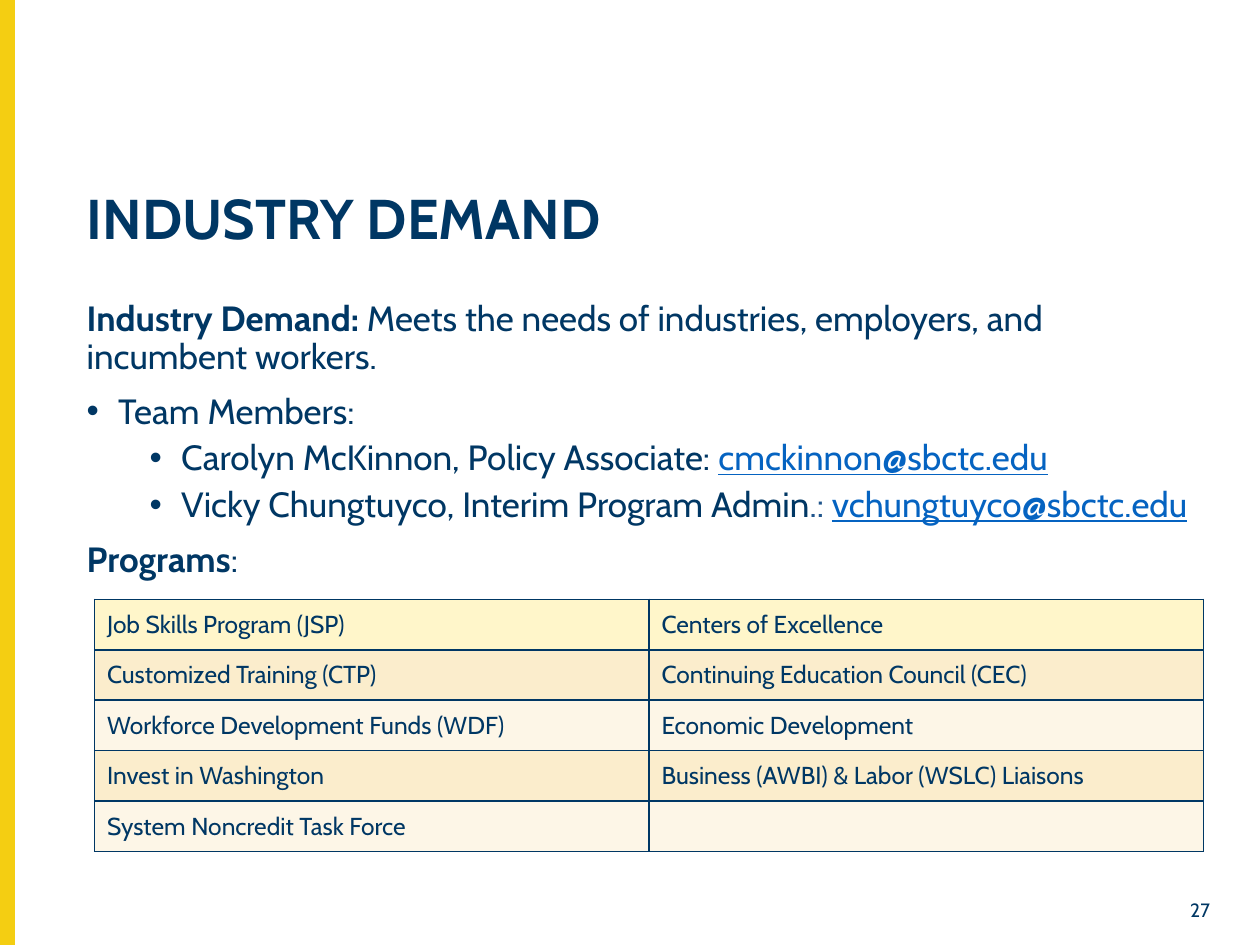
from dataclasses import dataclass

from lxml.etree import SubElement
from pptx import Presentation
from pptx.dml.color import RGBColor
from pptx.enum.shapes import MSO_SHAPE
from pptx.enum.text import MSO_ANCHOR, PP_ALIGN
from pptx.oxml.ns import qn
from pptx.util import Pt


@dataclass(frozen=True)
class Theme:
    font: str = "Cabin"
    navy: str = "003764"
    blue: str = "20558C"
    email: str = "0563C1"
    yellow: str = "F4CE12"
    header: str = "FFF6CA"
    bands: tuple = ("FBEDCC", "FDF6E7")
    title: int = 32
    body: int = 20
    cell: int = 14
    number: int = 11


THEME = Theme()
BOLD = {"bold": True}
EMAIL = {"color": THEME.email, "underline": True}

BODY = [
    (None, [("Industry Demand: ", BOLD),
            ("Meets the needs of industries, employers, and incumbent workers.", {})]),
    (0, [("Team Members:", {})]),
    (1, [("Carolyn McKinnon, Policy Associate: ", {}), ("cmckinnon@sbctc.edu", EMAIL)]),
    (1, [("Vicky Chungtuyco, Interim Program Admin", {}),
         (".: ", {"color": THEME.blue}), ("vchungtuyco@sbctc.edu", EMAIL)]),
    (None, [("Programs", BOLD), (":", {})]),
]

PROGRAMS = [
    ("Job Skills Program (JSP)", "Centers of Excellence"),
    ("Customized Training (CTP)", "Continuing Education Council (CEC)"),
    ("Workforce Development Funds (WDF)", "Economic Development"),
    ("Invest in Washington", "Business (AWBI) & Labor (WSLC) Liaisons"),
    ("System Noncredit Task Force", ""),
]


def add_text(paragraph, text, size, color=THEME.navy, bold=False, underline=False):
    run = paragraph.add_run()
    run.text = text
    run.font.name = THEME.font
    run.font.size = Pt(size)
    run.font.bold = bold
    run.font.underline = underline
    run.font.color.rgb = RGBColor.from_string(color)


def add_frame(slide, box, anchor=MSO_ANCHOR.TOP):
    frame = slide.shapes.add_textbox(*map(Pt, box)).text_frame
    frame.word_wrap = True
    frame.vertical_anchor = anchor
    return frame


def add_bullet(paragraph, level):
    paragraph.level = level
    properties = paragraph._p.get_or_add_pPr()
    properties.set("marL", str(Pt(18 + 36 * level)))
    properties.set("indent", str(Pt(-18)))
    SubElement(properties, qn("a:buFont")).set("typeface", "Arial")
    SubElement(properties, qn("a:buChar")).set("char", "•")


def add_side_bar(slide, box):
    bar = slide.shapes.add_shape(MSO_SHAPE.RECTANGLE, *map(Pt, box))
    bar.shadow.inherit = False
    bar.fill.solid()
    bar.fill.fore_color.rgb = RGBColor.from_string(THEME.yellow)
    bar.line.color.rgb = RGBColor.from_string(THEME.yellow)
    bar.line.width = Pt(1)


def add_title(slide, box):
    paragraph = add_frame(slide, box, MSO_ANCHOR.MIDDLE).paragraphs[0]
    paragraph.line_spacing = 0.9
    add_text(paragraph, "INDUSTRY DEMAND", THEME.title, bold=True)


def add_body(slide, box):
    frame = add_frame(slide, box)
    frame.margin_right = Pt(10)
    for index, (level, runs) in enumerate(BODY):
        paragraph = frame.add_paragraph() if index else frame.paragraphs[0]
        paragraph.line_spacing = 0.9
        if index:
            paragraph.space_before = Pt(5 if level == 1 else 10)
        if level is not None:
            add_bullet(paragraph, level)
        for text, style in runs:
            add_text(paragraph, text, THEME.body, **style)


def add_borders(cell):
    properties = cell._tc.get_or_add_tcPr()
    for side in ("lnL", "lnR", "lnT", "lnB"):
        line = SubElement(properties, qn(f"a:{side}"))
        line.set("w", str(Pt(1)))
        fill = SubElement(line, qn("a:solidFill"))
        SubElement(fill, qn("a:srgbClr")).set("val", THEME.navy)


def add_programs(slide, box):
    table = slide.shapes.add_table(len(PROGRAMS), 2, *map(Pt, box)).table
    for row, names in enumerate(PROGRAMS):
        color = THEME.bands[(row - 1) % 2] if row else THEME.header
        for column, name in enumerate(names):
            cell = table.cell(row, column)
            add_borders(cell)
            cell.fill.solid()
            cell.fill.fore_color.rgb = RGBColor.from_string(color)
            cell.vertical_anchor = MSO_ANCHOR.MIDDLE
            add_text(cell.text_frame.paragraphs[0], name, THEME.cell)


def add_slide_number(slide, box):
    paragraph = add_frame(slide, box, MSO_ANCHOR.MIDDLE).paragraphs[0]
    paragraph.alignment = PP_ALIGN.RIGHT
    add_text(paragraph, "27", THEME.number)


def main():
    presentation = Presentation()
    presentation.slide_width = Pt(720)
    presentation.slide_height = Pt(540)
    slide = presentation.slides.add_slide(presentation.slide_layouts[6])
    add_side_bar(slide, (0, 0, 8, 540))
    add_title(slide, (42.5, 106.5, 656.5, 39.5))
    add_body(slide, (42.5, 168.5, 656.5, 347))
    add_slide_number(slide, (661.5, 510.5, 37, 18.5))
    add_programs(slide, (54, 342.5, 633.6, 144))
    presentation.save("out.pptx")


if __name__ == "__main__":
    main()
